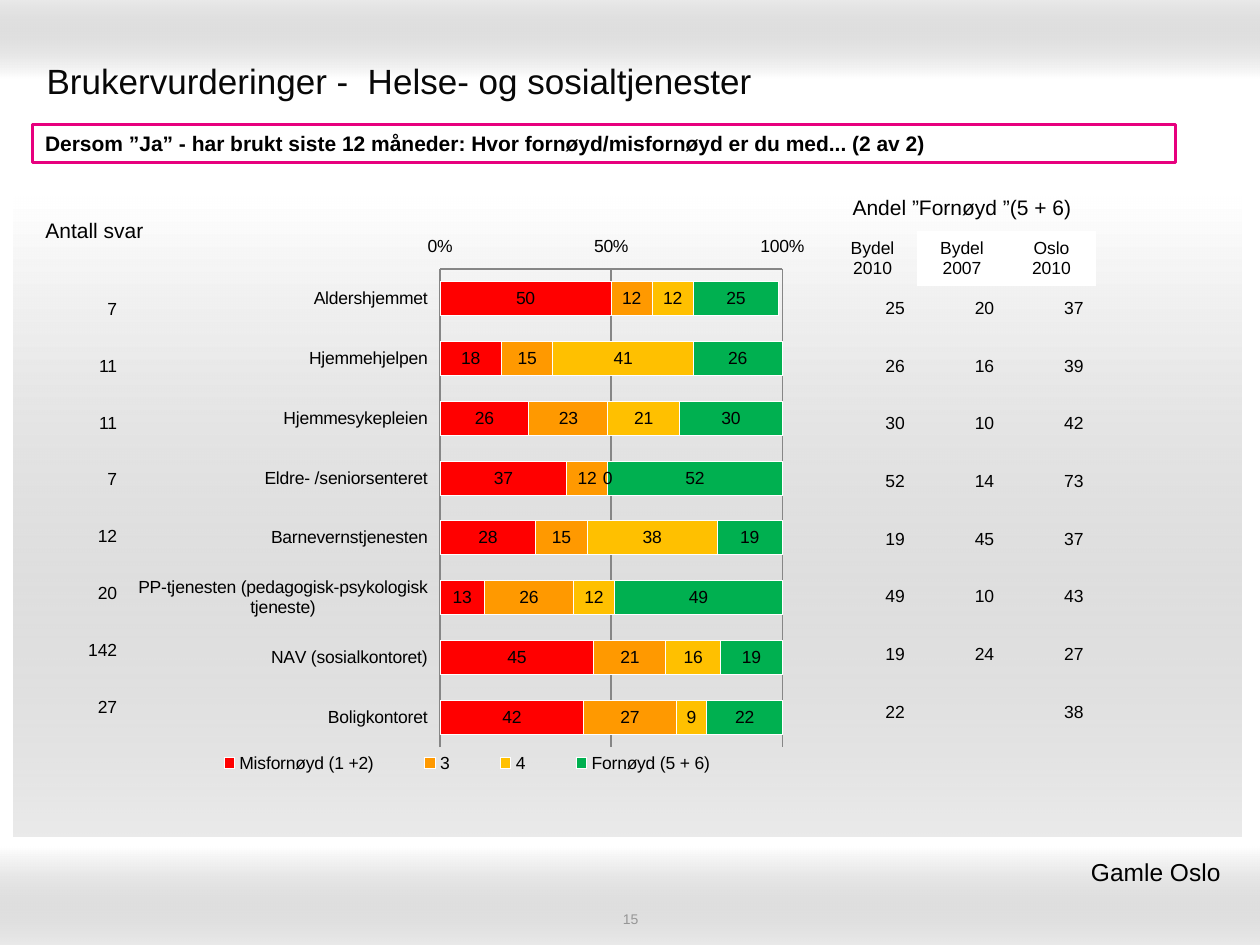
from dataclasses import dataclass
from typing import Any, Optional

import lxml.etree
import pptx
import pptx.chart.data
import pptx.dml.color
import pptx.enum.chart
import pptx.enum.shapes
import pptx.enum.text
import pptx.oxml
import pptx.oxml.ns
import pptx.util

Inches = pptx.util.Inches
Align = pptx.enum.text.PP_ALIGN
Anchor = pptx.enum.text.MSO_ANCHOR
FONT = "Arial"
BLACK = "000000"
WHITE = "FFFFFF"
NO_STYLE = "{2D5ABB26-0587-4C30-8999-92F81FD0307C}"


@dataclass
class Box:
    left: float
    top: float
    width: float
    height: float

    def lengths(self) -> tuple:
        return tuple(Inches(v) for v in (self.left, self.top, self.width, self.height))


@dataclass
class Band:
    box: Box
    angle: int


@dataclass
class Rating:
    name: str
    color: str
    shares: tuple


@dataclass
class Grid:
    box: Box
    rows: list
    heights: list
    align: Any
    size: float = 10


BANDS = [
    Band(Box(0, 0, 10, 0.62), 270),
    Band(Box(0, 6.72, 10, 0.78), 90),
    Band(Box(0.11, 1.56, 9.74, 5.08), 90),
]
SERVICES = [
    "Aldershjemmet", "Hjemmehjelpen", "Hjemmesykepleien", "Eldre- /seniorsenteret",
    "Barnevernstjenesten", "PP-tjenesten (pedagogisk-psykologisk tjeneste)",
    "NAV (sosialkontoret)", "Boligkontoret",
]
RATINGS = [
    Rating("Misfornøyd (1 +2)", "FF0000", (50, 18, 26, 37, 28, 13, 45, 42)),
    Rating("3", "FF9900", (12, 15, 23, 12, 15, 26, 21, 27)),
    Rating("4", "FFC000", (12, 41, 21, 0, 38, 12, 16, 9)),
    Rating("Fornøyd (5 + 6)", "00B050", (25, 26, 30, 52, 19, 49, 19, 22)),
]
SATISFIED_2007 = ["20", "16", "10", "14", "45", "10", "24", ""]
SATISFIED_OSLO = ["37", "39", "42", "73", "37", "43", "27", "38"]
ANSWERS = ["7", "11", "11", "7", "12", "20", "142", "27"]


def rgb(value: str) -> pptx.dml.color.RGBColor:
    return pptx.dml.color.RGBColor.from_string(value)


def style_font(font: Any, size: float, color: str = BLACK, bold: bool = False) -> None:
    font.name = FONT
    font.size = pptx.util.Pt(size)
    font.bold = bold
    font.color.rgb = rgb(color)


def write(frame: Any, text: str, size: float, align: Any = Align.LEFT,
          color: str = BLACK, bold: bool = False) -> None:
    for index, line in enumerate(text.split("\n")):
        paragraph = frame.paragraphs[0] if index == 0 else frame.add_paragraph()
        paragraph.alignment = align
        run = paragraph.add_run()
        run.text = line
        style_font(run.font, size, color, bold)


def add_label(slide: Any, box: Box, text: str, size: float, align: Any,
              color: str = BLACK, anchor: Any = Anchor.TOP) -> None:
    frame = slide.shapes.add_textbox(*box.lengths()).text_frame
    frame.word_wrap = True
    frame.vertical_anchor = anchor
    write(frame, text, size, align, color)


def add_rectangle(slide: Any, box: Box) -> Any:
    rectangle = slide.shapes.add_shape(pptx.enum.shapes.MSO_SHAPE.RECTANGLE, *box.lengths())
    rectangle.shadow.inherit = False
    return rectangle


def add_band(slide: Any, band: Band) -> None:
    shape = add_rectangle(slide, band.box)
    shape.line.fill.background()
    gradient = pptx.oxml.parse_xml(
        f'<a:gradFill {pptx.oxml.ns.nsdecls("a")} rotWithShape="1"><a:gsLst>'
        f'<a:gs pos="0"><a:srgbClr val="{WHITE}"/></a:gs>'
        '<a:gs pos="100000"><a:srgbClr val="999999"><a:alpha val="20000"/></a:srgbClr></a:gs>'
        f'</a:gsLst><a:lin ang="{band.angle * 60000}" scaled="0"/></a:gradFill>')
    shape._element.spPr.find(pptx.oxml.ns.qn("a:prstGeom")).addnext(gradient)


def add_grid(slide: Any, grid: Grid) -> Any:
    columns = len(grid.rows[0])
    table = slide.shapes.add_table(len(grid.rows), columns, *grid.box.lengths()).table
    table.first_row = False
    table.horz_banding = False
    table._tbl.tblPr.find(pptx.oxml.ns.qn("a:tableStyleId")).text = NO_STYLE
    for column in table.columns:
        column.width = Inches(grid.box.width / columns)
    for row, height, texts in zip(table.rows, grid.heights, grid.rows):
        row.height = Inches(height)
        for cell, text in zip(row.cells, texts):
            cell.fill.background()
            cell.vertical_anchor = Anchor.MIDDLE
            if text:
                write(cell.text_frame, text, grid.size, grid.align)
            else:
                cell.text_frame.paragraphs[0].font.size = pptx.util.Pt(grid.size)
    return table


def set_layout(parent: Any, after: Optional[str], box: Box, inner: bool) -> None:
    qn = pptx.oxml.ns.qn
    for old in parent.findall(qn("c:layout")):
        parent.remove(old)
    layout = lxml.etree.Element(qn("c:layout"))
    manual = lxml.etree.SubElement(layout, qn("c:manualLayout"))
    settings = [("layoutTarget", "inner")] if inner else []
    settings += [("xMode", "edge"), ("yMode", "edge"), ("x", box.left), ("y", box.top),
                 ("w", box.width), ("h", box.height)]
    for tag, value in settings:
        lxml.etree.SubElement(manual, qn(f"c:{tag}")).set("val", str(value))
    if after:
        parent.find(qn(after)).addnext(layout)
    else:
        parent.insert(0, layout)


def add_ratings_chart(slide: Any, box: Box) -> None:
    enums = pptx.enum.chart
    data = pptx.chart.data.CategoryChartData()
    data.categories = SERVICES
    for rating in RATINGS:
        data.add_series(rating.name, rating.shares)
    chart = slide.shapes.add_chart(enums.XL_CHART_TYPE.BAR_STACKED, *box.lengths(), data).chart
    style_font(chart.font, 10)
    chart.has_title = False
    chart.has_legend = True
    chart.legend.position = enums.XL_LEGEND_POSITION.BOTTOM
    chart.legend.include_in_layout = False

    plot = chart.plots[0]
    plot.gap_width = 75
    plot.overlap = 100
    plot.vary_by_categories = False
    for series, rating in zip(plot.series, RATINGS):
        series.format.fill.solid()
        series.format.fill.fore_color.rgb = rgb(rating.color)
        series.format.line.color.rgb = rgb(WHITE)
        labels = series.data_labels
        labels.show_value = True
        labels.number_format = "0"
        labels.number_format_is_linked = False
        style_font(labels.font, 10)

    services, shares = chart.category_axis, chart.value_axis
    services.reverse_order = True
    services.major_tick_mark = enums.XL_TICK_MARK.NONE
    shares.major_tick_mark = enums.XL_TICK_MARK.INSIDE
    shares.minimum_scale, shares.maximum_scale, shares.major_unit = 0, 100, 50
    shares.has_major_gridlines = True
    shares.tick_labels.number_format = "General\\%"
    shares.tick_labels.number_format_is_linked = False
    for axis in (services, shares):
        axis.tick_label_position = enums.XL_TICK_LABEL_POSITION.LOW
        style_font(axis.tick_labels.font, 10)
    for line in (services.format.line, shares.format.line, shares.major_gridlines.format.line):
        line.color.rgb = rgb("868686")
        line.width = pptx.util.Pt(0.75)

    set_layout(chart._chartSpace.chart.plotArea, None, Box(0.456, 0.076, 0.493, 0.836), True)
    set_layout(chart.legend._element, "c:legendPos", Box(0.08, 0.91, 0.83, 0.06), False)


def main() -> None:
    deck = pptx.Presentation()
    deck.slide_width, deck.slide_height = Inches(10), Inches(7.5)
    slide = deck.slides.add_slide(deck.slide_layouts[5])
    for band in BANDS:
        add_band(slide, band)

    title = slide.shapes.title
    title.left, title.top, title.width, title.height = Box(0.27, 0.36, 9.45, 0.55).lengths()
    title.text_frame.vertical_anchor = Anchor.MIDDLE
    write(title.text_frame, "Brukervurderinger -  Helse- og sosialtjenester", 20, color="080808")
    slide.shapes._spTree.append(title._element)
    add_label(slide, Box(3.42, 7.22, 3.17, 0.14), "15", 8, Align.CENTER, "969696", Anchor.MIDDLE)

    question = add_rectangle(slide, Box(0.26, 0.99, 9.07, 0.3))
    question.fill.solid()
    question.fill.fore_color.rgb = rgb(WHITE)
    question.line.color.rgb = rgb("E7007E")
    question.line.width = pptx.util.Pt(2)
    question.text_frame.word_wrap = True
    question.text_frame.vertical_anchor = Anchor.MIDDLE
    write(question.text_frame, "Dersom ”Ja” - har brukt siste 12 måneder: "
          "Hvor fornøyd/misfornøyd er du med... (2 av 2)", 12, bold=True)

    add_ratings_chart(slide, Box(0.98, 1.79, 5.51, 4.54))

    satisfied_2010 = [str(share) for share in RATINGS[-1].shares]
    add_grid(slide, Grid(Box(6.57, 2.22, 2.13, 3.66),
                         list(zip(satisfied_2010, SATISFIED_2007, SATISFIED_OSLO)),
                         [3.66 / 8] * 8, Align.RIGHT))
    heading = add_grid(slide, Grid(Box(6.57, 1.47, 2.13, 0.8),
                                   [("", "", ""), ("Bydel\n2010", "Bydel\n2007", "Oslo\n2010")],
                                   [0.36, 0.44], Align.CENTER))
    heading.cell(0, 0).merge(heading.cell(0, 2))
    write(heading.cell(0, 0).text_frame, "Andel ”Fornøyd ”(5 + 6)", 12, Align.CENTER)
    for column in (1, 2):
        fill = heading.cell(1, column).fill
        fill.solid()
        fill.fore_color.rgb = rgb(WHITE)
    add_grid(slide, Grid(Box(0.51, 2.23, 0.52, 3.61), [(count,) for count in ANSWERS],
                         [3.61 / 8] * 8, Align.RIGHT))
    add_grid(slide, Grid(Box(0.04, 1.54, 1.42, 0.59), [("Antall svar",)], [0.59],
                         Align.CENTER, 12))
    add_label(slide, Box(6.1, 6.75, 3.74, 0.34), "Gamle Oslo ", 14, Align.RIGHT)
    deck.save("out.pptx")


if __name__ == "__main__":
    main()
